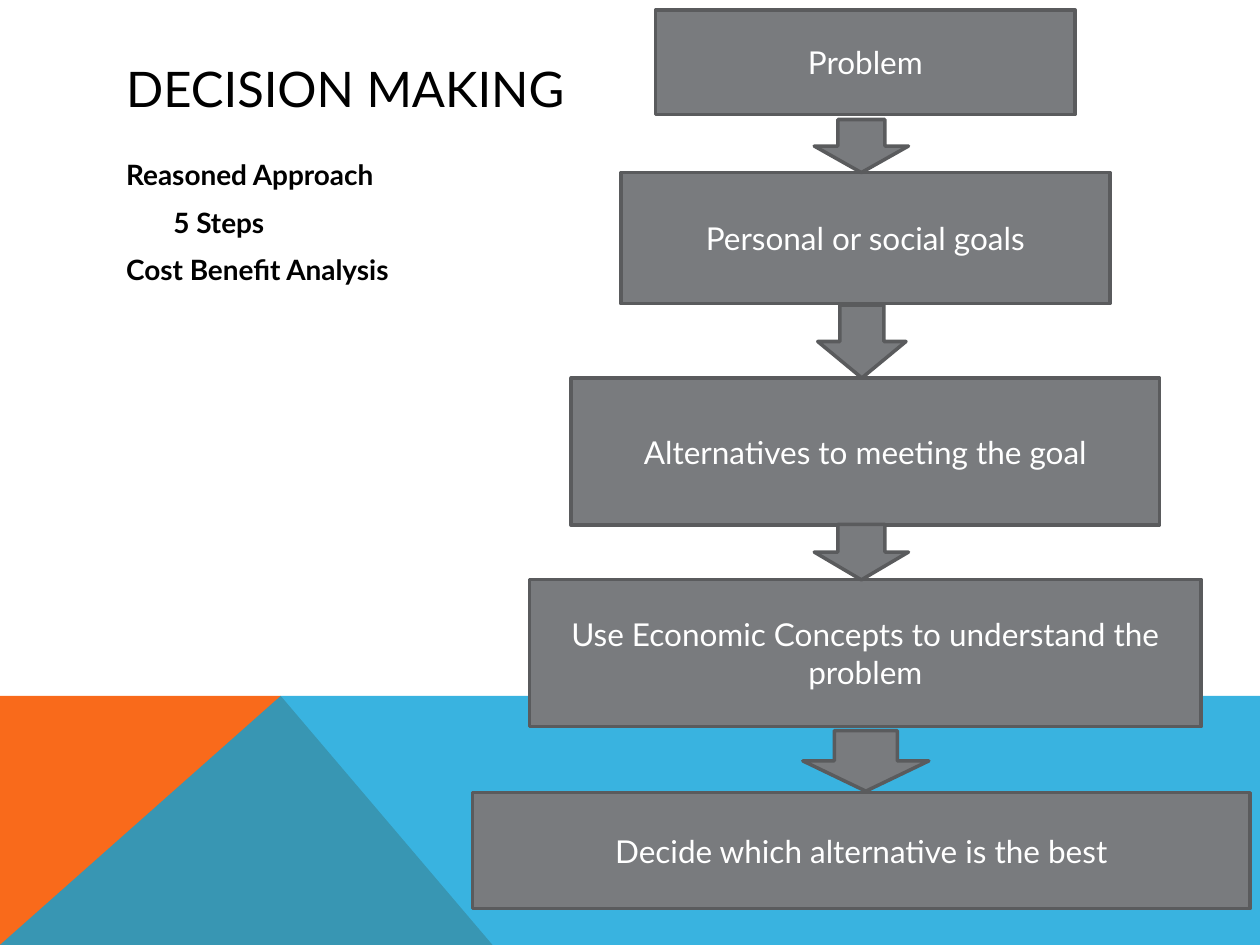
from lxml import etree
from pptx import Presentation
from pptx.dml.color import RGBColor
from pptx.enum.shapes import MSO_SHAPE
from pptx.enum.text import MSO_ANCHOR, MSO_AUTO_SIZE, PP_ALIGN
from pptx.oxml.ns import qn
from pptx.util import Cm, Pt

RECTANGLE, DOWN_ARROW = MSO_SHAPE.RECTANGLE, MSO_SHAPE.DOWN_ARROW
MIDDLE, TOP = MSO_ANCHOR.MIDDLE, MSO_ANCHOR.TOP
LEFT, CENTER = PP_ALIGN.LEFT, PP_ALIGN.CENTER
NO_AUTOFIT = MSO_AUTO_SIZE.NONE

FONT = "Lato"
BLACK, WHITE = "000000", "FFFFFF"
ORANGE, BLUE = "F96A1B", "08A1D9"
STEP_FILL, STEP_LINE = "797B7E", "5A5B5D"

APPROACH = ["Reasoned Approach", "\t5 Steps", "Cost Benefit Analysis"]
# Each entry: label, centre offset, top, width, height.
STEPS = [
    ("Problem", 0.08, 0, 8.46, 2.11),
    ("Personal or social goals", 0.08, 3.28, 9.86, 2.64),
    ("Alternatives to meeting the goal", 0.08, 7.42, 11.86, 2.97),
    ("Use Economic Concepts to understand the problem", 0.08, 11.48, 13.54, 2.97),
    ("Decide which alternative is the best", 0, 15.78, 15.67, 2.34),
]
# Each entry: centre offset, top, width, height.
ARROWS = [
    (0, 2.21, 1.9, 1.07),
    (0.01, 5.95, 1.78, 1.47),
    (0, 10.37, 1.9, 1.12),
    (0.09, 14.53, 2.54, 1.22),
]


def color(hex_string):
    """Turn a hex string into a colour."""
    return RGBColor.from_string(hex_string)


def set_attributes(target, values):
    """Set every attribute named in a dict of format values."""
    for name, value in values.items():
        setattr(target, name, value)


def place(shape, left, top, width, height):
    """Move a shape to a box given in centimetres."""
    set_attributes(shape, {"left": Cm(left), "top": Cm(top),
                           "width": Cm(width), "height": Cm(height)})


def write(paragraph, text, size, hex_string, align, bold=False):
    """Write one formatted paragraph."""
    set_attributes(paragraph, {"text": text, "alignment": align, "line_spacing": 1.0})
    set_attributes(paragraph.font, {"name": FONT, "size": Pt(size), "bold": bold})
    paragraph.font.color.rgb = color(hex_string)


def paint(shape, fill, line=None):
    """Give a shape a flat fill, an optional outline and no shadow."""
    shape.shadow.inherit = False
    shape.fill.solid()
    shape.fill.fore_color.rgb = color(fill)
    if line:
        shape.line.color.rgb = color(line)
        shape.line.width = Pt(2)
    else:
        shape.line.fill.background()


def add_polygon(slide, points, fill):
    """Draw a closed outline through points given in centimetres."""
    corners = [(Cm(x), Cm(y)) for x, y in points]
    builder = slide.shapes.build_freeform(*corners[0])
    builder.add_line_segments(corners[1:], close=True)
    polygon = builder.convert_to_shape()
    paint(polygon, fill)
    return polygon


def add_footer_band(slide, left, top, width, height):
    """Draw the orange wedge and the translucent blue band over it."""
    right, bottom, peak = left + width, top + height, left + 5.66
    add_polygon(slide, [(left, bottom), (left, top), (peak, top),
                        (left + 9.93, bottom)], ORANGE)
    band = add_polygon(slide, [(left, bottom), (peak, top), (right, top),
                               (right, bottom)], BLUE)
    blue = band.fill._xPr.find(qn("a:solidFill"))[0]
    etree.SubElement(blue, qn("a:alpha"), val="80000")


def fill_heading(slide, left, top, width, height):
    """Place and write the slide title."""
    title = slide.shapes.title
    place(title, left, top, width, height)
    set_attributes(title.text_frame, {"vertical_anchor": MIDDLE, "auto_size": NO_AUTOFIT})
    write(title.text_frame.paragraphs[0], "DECISION MAKING", 28, BLACK, LEFT)


def fill_approach(slide, left, top, width, height):
    """Place and write the list of approaches without bullets."""
    body = slide.placeholders[1]
    place(body, left, top, width, height)
    frame = body.text_frame
    set_attributes(frame, {"vertical_anchor": TOP, "auto_size": NO_AUTOFIT})
    for index, text in enumerate(APPROACH):
        paragraph = frame.add_paragraph() if index else frame.paragraphs[0]
        write(paragraph, text, 16, BLACK, LEFT, bold=True)
        set_attributes(paragraph, {"space_before": Pt(8)})
        properties = paragraph._p.get_or_add_pPr()
        properties.set("marL", str(Cm(0.95)))
        properties.set("indent", str(Cm(-0.95)))
        etree.SubElement(properties, qn("a:buNone"))


def add_flow_part(slide, kind, center, top, width, height):
    """Add one grey part of the flow around a centre line."""
    part = slide.shapes.add_shape(kind, Cm(center - width / 2), Cm(top),
                                  Cm(width), Cm(height))
    paint(part, STEP_FILL, STEP_LINE)
    return part


def add_decision_flow(slide, left, top, width):
    """Stack the widening steps and the arrows between them."""
    center = left + width / 2
    for label, offset, down, step_width, height in STEPS:
        step = add_flow_part(slide, RECTANGLE, center + offset, top + down,
                             step_width, height)
        set_attributes(step.text_frame, {"word_wrap": True, "vertical_anchor": MIDDLE})
        write(step.text_frame.paragraphs[0], label, 18, WHITE, CENTER)
    for offset, down, arrow_width, height in ARROWS:
        add_flow_part(slide, DOWN_ARROW, center + offset, top + down,
                      arrow_width, height)


def main():
    """Build the slide and save it."""
    presentation = Presentation()
    set_attributes(presentation, {"slide_width": Cm(25.4), "slide_height": Cm(19.05)})
    slide = presentation.slides.add_slide(presentation.slide_layouts[1])
    add_footer_band(slide, 0, 14.03, 25.4, 5.02)
    fill_heading(slide, 2.29, 1.02, 20.88, 1.52)
    fill_approach(slide, 2.29, 3.05, 20.88, 9.93)
    add_decision_flow(slide, 9.53, 0.2, 15.67)
    presentation.save("out.pptx")


if __name__ == "__main__":
    main()
